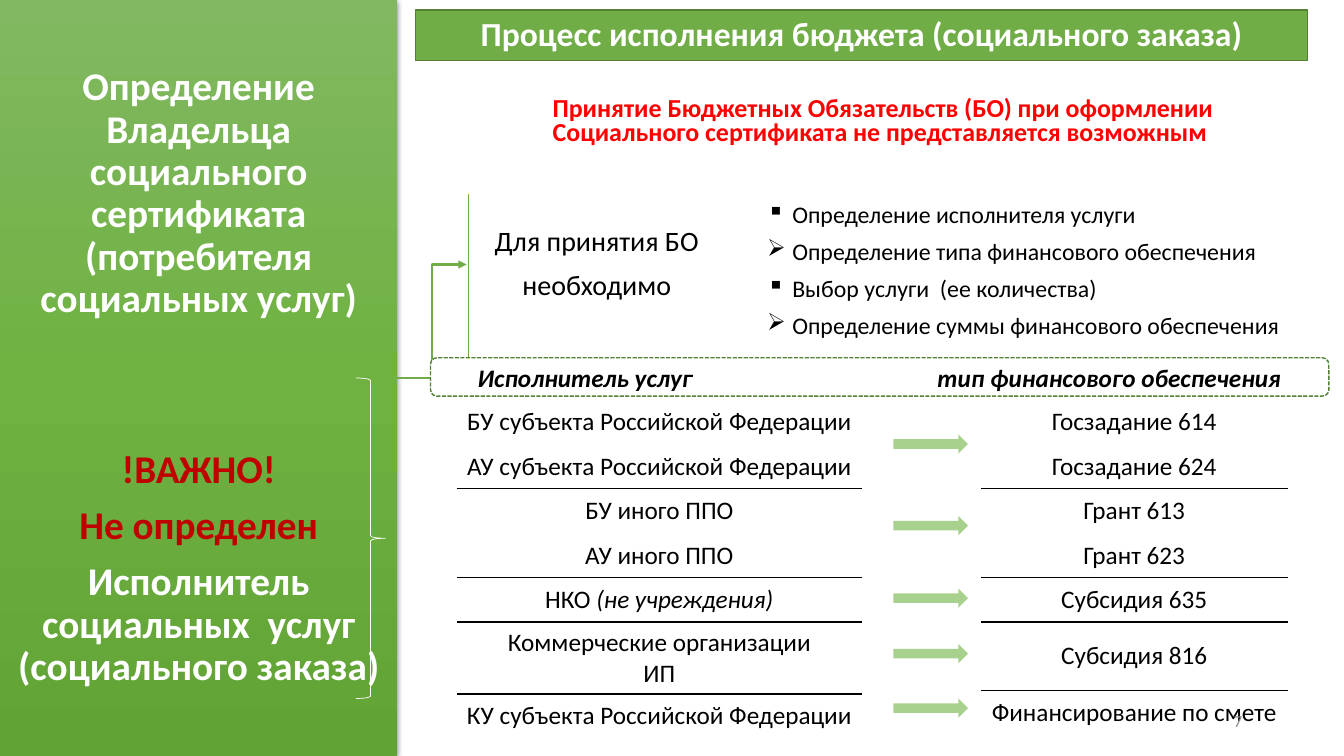
from copy import deepcopy
from dataclasses import dataclass

from lxml import etree
from pptx import Presentation
from pptx.dml.color import RGBColor
from pptx.enum.dml import MSO_LINE
from pptx.enum.shapes import MSO_CONNECTOR, MSO_SHAPE
from pptx.enum.text import MSO_ANCHOR, PP_ALIGN
from pptx.oxml.ns import qn
from pptx.util import Inches, Pt

RECTANGLE, ROUNDED = MSO_SHAPE.RECTANGLE, MSO_SHAPE.ROUNDED_RECTANGLE
ARROW, BRACE = MSO_SHAPE.RIGHT_ARROW, MSO_SHAPE.RIGHT_BRACE
ELBOW, STRAIGHT = MSO_CONNECTOR.ELBOW, MSO_CONNECTOR.STRAIGHT
DASH = MSO_LINE.SQUARE_DOT
LEFT, CENTER, RIGHT, JUSTIFY = PP_ALIGN.LEFT, PP_ALIGN.CENTER, PP_ALIGN.RIGHT, PP_ALIGN.JUSTIFY
MIDDLE = MSO_ANCHOR.MIDDLE
WIDTH, HEIGHT = Inches(13.33), Inches(7.5)
COLUMN, ROW = WIDTH / 100, HEIGHT / 100
COLORS = {
    "white": "FFFFFF", "black": "000000", "green": "70AD47", "edge": "538035",
    "dash": "548235", "arrow": "A9D18E", "dark red": "C00000", "red": "FF0000",
    "gray": "8C8C8C", "top": "81B861", "middle": "6FB242", "bottom": "62A336",
}
SERVICES = [
    ["БУ субъекта Российской Федерации"], ["АУ субъекта Российской Федерации"],
    ["БУ иного ППО"], ["АУ иного ППО"], ["НКО |(не учреждения)"],
    ["Коммерческие организации", "ИП"], ["КУ субъекта Российской Федерации"],
]
FUNDING = [["Госзадание 614"], ["Госзадание 624"], ["Грант 613"], ["Грант 623"],
           ["Субсидия 635"], ["Субсидия 816"], ["Финансирование по смете"]]
STEPS = ["Определение исполнителя услуги", "Определение типа финансового обеспечения",
         "Выбор услуги  (ее количества)", "Определение суммы финансового обеспечения"]
UNDERLINED_ROWS = (1, 3, 4, 5)
TALL_ROW = 5


@dataclass
class Box:
    """A region measured in hundredths of the slide."""
    left: float
    top: float
    width: float
    height: float

    def inner(self, left, top, width, height):
        """Return a box placed relative to this one."""
        return Box(self.left + left, self.top + top, width, height)

    def lengths(self):
        """Return left, top, width and height as slide lengths."""
        return (round(self.left * COLUMN), round(self.top * ROW),
                round(self.width * COLUMN), round(self.height * ROW))


def color(name):
    """Return a named colour."""
    return RGBColor.from_string(COLORS[name])


def write(frame, texts, size, ink="black", bold=False, italic=False, align=CENTER,
          spacing=1.0, before=0):
    """Write paragraphs; a bar in a text starts an italic run."""
    frame.word_wrap = True
    frame.vertical_anchor = MIDDLE
    for index, text in enumerate(texts):
        paragraph = frame.paragraphs[0] if index == 0 else frame.add_paragraph()
        formats = {"alignment": align, "line_spacing": spacing, "space_before": Pt(before)}
        for name, value in formats.items():
            setattr(paragraph, name, value)
        for order, piece in enumerate(text.split("|")):
            run = paragraph.add_run()
            run.text = piece
            run.font.color.rgb = color(ink)
            fonts = {"name": "Calibri", "size": Pt(size), "bold": bold,
                     "italic": italic or order > 0}
            for name, value in fonts.items():
                setattr(run.font, name, value)


def add_text(slide, box, texts, size, **formats):
    """Add a text box."""
    shape = slide.shapes.add_textbox(*box.lengths())
    write(shape.text_frame, texts, size, **formats)
    return shape


def add_shape(slide, kind, box, fill=None, line=None, width=1):
    """Add a preset shape without shadow."""
    shape = slide.shapes.add_shape(kind, *box.lengths())
    shape.shadow.inherit = False
    if fill:
        shape.fill.solid()
        shape.fill.fore_color.rgb = color(fill)
    else:
        shape.fill.background()
    if line:
        shape.line.color.rgb = color(line)
        shape.line.width = Pt(width)
    else:
        shape.line.fill.background()
    return shape


def add_line(slide, kind, box, width):
    """Add a green connector from the bottom left to the top right of a box."""
    left, top, across, down = box.lengths()
    line = slide.shapes.add_connector(kind, left, top + down, left + across, top)
    line.line.color.rgb = color("green")
    line.line.width = Pt(width)
    etree.SubElement(line._element.spPr, qn("a:effectLst"))
    return line


def add_sidebar(slide, box):
    """Add the gradient panel with its brace."""
    panel = add_shape(slide, RECTANGLE, box)
    panel.fill.gradient()
    panel.fill.gradient_angle = 270
    stops = panel._element.spPr.find(".//" + qn("a:gsLst"))
    stops.append(deepcopy(stops[0]))
    for stop, name, position in zip(panel.fill.gradient_stops, ("top", "middle", "bottom"), (0, 0.5, 1)):
        stop.color.rgb = color(name)
        stop.position = position
    effects = panel._element.spPr.find(qn("a:effectLst"))
    shadow = etree.SubElement(effects, qn("a:outerShdw"), blurRad="57150", dist="19050", dir="5400000")
    shade = etree.SubElement(shadow, qn("a:srgbClr"), val=COLORS["black"])
    etree.SubElement(shade, qn("a:alpha"), val="63000")
    texts = ["Определение Владельца социального сертификата (потребителя социальных услуг)",
             "!ВАЖНО!", "Не определен", "Исполнитель социальных  услуг (социального заказа)"]
    write(panel.text_frame, texts, 28, "white", bold=True, spacing=0.9, before=10)
    paragraphs = panel.text_frame.paragraphs
    paragraphs[1].space_before = Pt(91.5)
    for paragraph in paragraphs[1:3]:
        paragraph.runs[0].font.color.rgb = color("dark red")
    add_shape(slide, BRACE, box.inner(26.48, 50, 2.18, 42.4), line="white", width=0.5)
    return panel


def add_heading(slide, box):
    """Add the title bar and the red warning."""
    title = add_shape(slide, RECTANGLE, box.inner(0, 0, box.width, 6.67), "green", "edge")
    write(title.text_frame, ["Процесс исполнения бюджета (социального заказа)"], 24, "white",
          bold=True, spacing=0.9)
    warning = ("Принятие Бюджетных Обязательств (БО) при оформлении "
               "Социального сертификата не представляется возможным ")
    add_text(slide, box.inner(5.02, 10.54, 59.49, 8.53), [warning], 18.5, ink="red", bold=True,
             spacing=0.8, before=10)


def add_needs(slide, box, panel):
    """Add the conditions, their bullets and the arrow from the panel."""
    need = add_text(slide, box.inner(0, 0, 19.35, 17.73), ["Для принятия БО", "необходимо"], 20,
                    spacing=0.9, before=10)
    arrow = add_line(slide, ELBOW, box.inner(-5.17, 8.87, 5.17, 15), 1.5)
    arrow.begin_connect(panel, 3)
    arrow.end_connect(need, 1)
    etree.SubElement(arrow.line._get_or_add_ln(), qn("a:tailEnd"), type="triangle")
    add_line(slide, STRAIGHT, box.inner(0.15, -0.4, 0, 21.6), 0.5)
    steps = add_text(slide, box.inner(21.61, 0.13, 41.71, 19.47), STEPS, 17, align=JUSTIFY,
                     spacing=0.8, before=10)
    for index, paragraph in enumerate(steps.text_frame.paragraphs):
        properties = paragraph._p.get_or_add_pPr()
        properties.set("marL", str(Inches(0.25)))
        properties.set("indent", str(-Inches(0.25)))
        etree.SubElement(properties, qn("a:buChar"), char="▪➢"[index % 2])


def set_borders(cell, top, bottom):
    """Draw the chosen horizontal borders and clear the rest."""
    properties = cell._tc.get_or_add_tcPr()
    for index, (side, drawn) in enumerate((("L", False), ("R", False), ("T", top), ("B", bottom))):
        line = etree.Element(qn("a:ln" + side), w=str(Pt(1)))
        paint = etree.SubElement(line, qn("a:solidFill" if drawn else "a:noFill"))
        if drawn:
            etree.SubElement(paint, qn("a:srgbClr"), val=COLORS["black"])
        properties.insert(index, line)


def add_list(slide, box, rows, tall):
    """Add a one-column table with a taller sixth row."""
    table = slide.shapes.add_table(len(rows), 1, *box.lengths()).table
    table.first_row = table.horz_banding = False
    for index, texts in enumerate(rows):
        table.rows[index].height = round((tall if index == TALL_ROW else 5.87) * ROW)
        cell = table.cell(index, 0)
        cell.fill.background()
        cell.margin_left = cell.margin_right = Inches(0.05)
        write(cell.text_frame, texts, 18)
        cell.vertical_anchor = MIDDLE
        set_borders(cell, index - 1 in UNDERLINED_ROWS, index in UNDERLINED_ROWS)


def add_funding(slide, box):
    """Add both lists, the arrows between them and their header."""
    add_list(slide, box.inner(1.95, 5.6, 30.16, 44.13), SERVICES, 9.53)
    add_list(slide, box.inner(40.96, 5.6, 22.81, 43.87), FUNDING, 9.07)
    for top in (10.14, 20.94, 30.54, 37.87, 45.07):
        add_shape(slide, ARROW, box.inner(34.44, top, 5.55, 2.53), "arrow")
    add_text(slide, box.inner(38.64, 45.34, 22.51, 5.33), ["7"], 12, ink="gray", align=RIGHT)
    header = add_shape(slide, ROUNDED, box.inner(0, 0, box.width, 5.07), "white", "dash")
    header.line.dash_style = DASH
    header.text_frame.margin_left = Inches(0.45)
    write(header.text_frame, ["Исполнитель услуг\tтип финансового обеспечения"], 18, bold=True,
          italic=True, align=LEFT)
    properties = header.text_frame.paragraphs[0]._p.get_or_add_pPr()
    tabs = etree.SubElement(properties, qn("a:tabLst"))
    etree.SubElement(tabs, qn("a:tab"), pos=str(Inches(4.56)), algn="l")


def main():
    """Build and save the slide."""
    presentation = Presentation()
    presentation.slide_width, presentation.slide_height = WIDTH, HEIGHT
    slide = presentation.slides.add_slide(presentation.slide_layouts[6])
    panel = add_sidebar(slide, Box(0, 0, 29.56, 100))
    add_heading(slide, Box(30.91, 1.33, 66.39, 19.07))
    add_needs(slide, Box(34.73, 26.13, 63.32, 19.6), panel)
    add_funding(slide, Box(32.03, 47.33, 66.84, 50.67))
    presentation.save("out.pptx")


if __name__ == "__main__":
    main()
